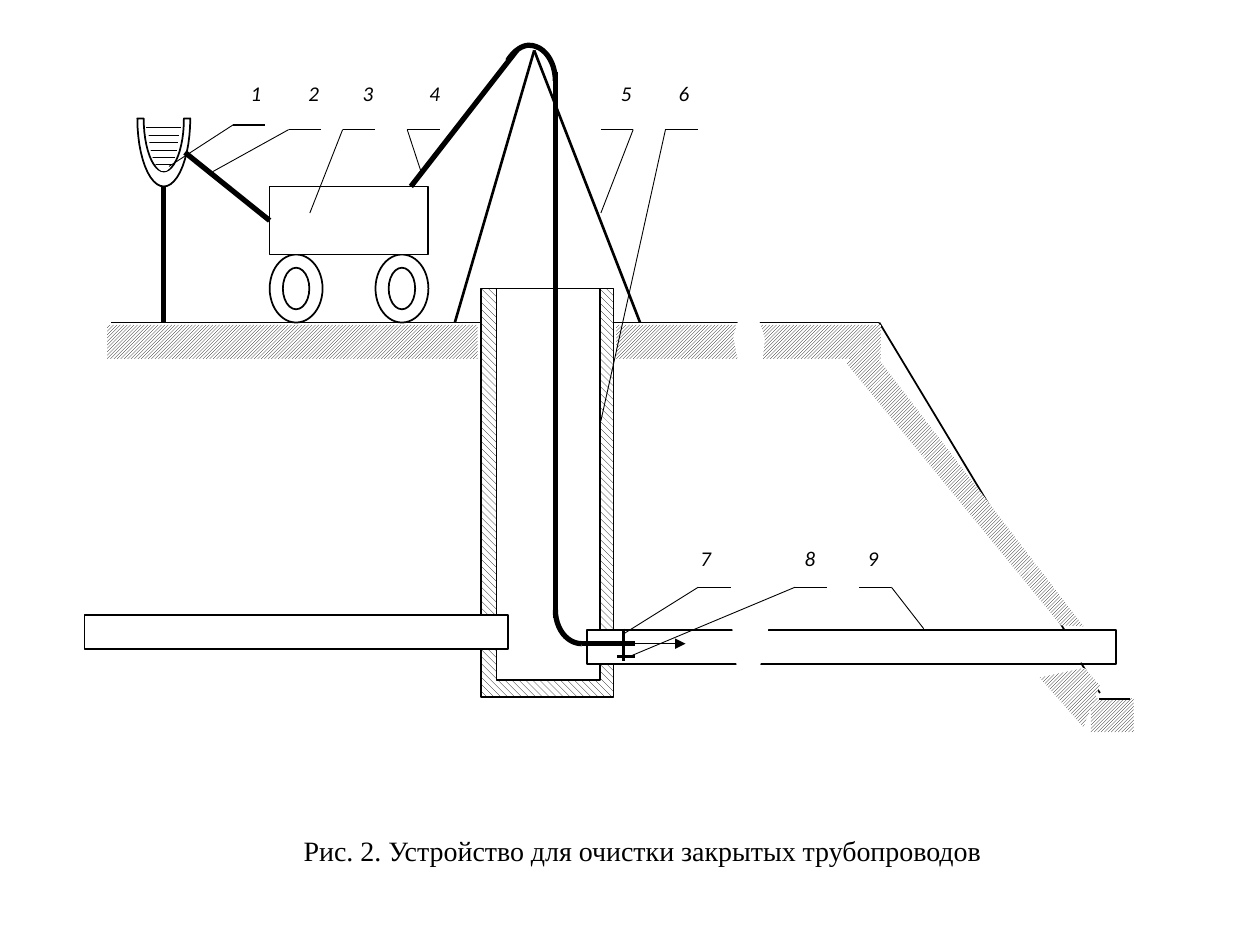
import math
from lxml import etree
from pptx import Presentation
from pptx import util as u
from pptx.dml.color import RGBColor
from pptx.enum import dml, shapes, text
from pptx.oxml.ns import qn

THEME = {
    "ink": RGBColor(0, 0, 0), "paper": RGBColor(255, 255, 255),
    "caption": ("Times New Roman", 16), "label": ("Calibri", 12),
    "hair": 0.5, "thin": 0.75, "outline": 1, "leg": 1.5, "hose": 3,
}
WIDTH, HEIGHT = 10, 7.5
# Drawing grid in inches: all positions below are (column, row)
LEFT, TOP, COLUMN, ROW = 0.25, 0.13, 0.42, 0.27

CAPTION = "Рис. 2. Устройство для очистки закрытых трубопроводов"
WHEELS = [4.5, 6.5]
CART = (4.5, 5, 3, 2)
SHAFT_WALL, SHAFT_INSIDE = (8.5, 8, 2.5, 12), (8.79, 8, 1.95, 11.5)
PIPES = [(1, 17.6, 8, 1), (10.5, 18.04, 10, 1)]
TROUGH = (2.5, 3)
WATER = (2.5, 3.26)
TRIPOD = [((8, 9), (9.5, 1)), ((9.5, 1), (11.5, 9))]

# Hose: curves as start point and cubic segments
TOP_BEND = ((9, 1.3), [((9.1, 1.04), (9.26, 0.85), (9.4, 0.85)),
                       ((9.69, 0.85), (9.9, 1.33), (9.9, 1.89))])
LOW_BEND = ((9.9, 17.44), [((9.9, 18), (10.12, 18.44), (10.4, 18.44))])
HOSE_ARM = ((9.17, 1), (7.17, 5))
HOSE_DROP = ((9.9, 1.63), (9.9, 17.7))
NOZZLE = ((10.4, 18.44), (11.4, 18.44))
JET = ((11.36, 18.44), (12.36, 18.44))
VALVE = [((11.19, 18), (11.19, 18.96)), ((11.07, 18.81), (11.4, 18.81))]

GROUND = [((8.5, 9), (1.5, 9)), ((11, 9), (16.02, 9)),
          ((16.02, 9), (19.52, 18.04)), ((19.83, 19), (20.19, 19.89))]
SOIL = [(1.43, 9.07, 7, 1), (11.05, 9.07, 5, 1), (20.02, 20.04, 0.81, 1)]
SLOPE_SOIL = [(15.4, 10.2), (16.02, 9.1), (16.02, 10.1), (19.88, 17.93), (19.45, 17.9)]
TOE_SOIL = [(19.05, 19.44), (19.9, 19.15), (20.19, 19.67), (19.88, 20.9)]
TOE_LINE = ((20.17, 20.07), (20.76, 20.07))
BREAK = [(13.48, 8.33), (13.33, 9.07), (13.26, 9.4), (13.4, 10.52), (13.24, 12.85),
         (13.19, 13.48), (13.31, 15.37), (13.4, 16.26), (13.24, 17.93), (13.29, 18.78),
         (13.43, 19.96), (13.67, 19.74), (13.9, 18.22), (13.98, 17.37), (13.76, 15.37),
         (13.9, 13.56), (13.69, 11.85), (13.86, 9.48), (13.64, 8.41)]

# Callouts: number, label column, shelf left, shelf row, leader side, target
SHELF = 0.61
CALLOUTS = [
    ("1", 4.24, 3.81, 3.19, "left", (2.6, 4.41)),
    ("2", 5.33, 4.86, 3.33, "left", (3.43, 4.56)),
    ("3", 6.36, 5.88, 3.33, "left", (5.26, 5.78)),
    ("4", 7.62, 7.1, 3.33, "left", (7.36, 4.56)),
    ("5", 11.24, 10.76, 3.33, "right", (10.76, 5.78)),
    ("6", 12.33, 11.98, 3.33, "left", (10.76, 11.89)),
    ("7", 12.74, 12.6, 16.78, "left", (11.19, 18.15)),
    ("8", 14.71, 14.43, 16.78, "left", (11.31, 18.81)),
    ("9", 15.9, 15.64, 16.78, "right", (16.86, 18)),
]
UPPER_LABELS, LOWER_LABELS = 2.26, 15.93

deck = Presentation()
deck.slide_width, deck.slide_height = u.Inches(WIDTH), u.Inches(HEIGHT)
slide = deck.slides.add_slide(deck.slide_layouts[6])


def place(point):
    return u.Inches(LEFT + point[0] * COLUMN), u.Inches(TOP + point[1] * ROW)


def paint(part, fill="paper", width=None):
    """Fill with a theme colour, a hatch pattern, or nothing."""
    part.shadow.inherit = False
    if fill is None:
        part.fill.background()
    elif isinstance(fill, str):
        part.fill.solid()
        part.fill.fore_color.rgb = THEME[fill]
    else:
        part.fill.patterned()
        part.fill.pattern = fill
        part.fill.fore_color.rgb = THEME["ink"]
        part.fill.back_color.rgb = THEME["paper"]
    if width:
        part.line.color.rgb = THEME["ink"]
        part.line.width = u.Pt(THEME[width])
    else:
        part.line.fill.background()
    return part


def block(box, fill="paper", width="outline", preset=shapes.MSO_SHAPE.RECTANGLE):
    column, row, columns, rows = box
    part = slide.shapes.add_shape(preset, *place((column, row)),
                                  u.Inches(columns * COLUMN), u.Inches(rows * ROW))
    return paint(part, fill, width)


def outline(points, fill="paper", width=None, close=True):
    builder = slide.shapes.build_freeform(*place(points[0]))
    builder.add_line_segments([place(p) for p in points[1:]], close=close)
    return paint(builder.convert_to_shape(), fill, width)


def line(ends, width="outline", arrow=False):
    part = slide.shapes.add_connector(shapes.MSO_CONNECTOR.STRAIGHT, *place(ends[0]), *place(ends[1]))
    part.line.color.rgb = THEME["ink"]
    part.line.width = u.Pt(THEME[width])
    if arrow:
        etree.SubElement(part.line._get_or_add_ln(), qn("a:tailEnd"), type="triangle")
    etree.SubElement(part._element.spPr, qn("a:effectLst"))
    return part


def bowl(center, across, deep, steps=24):
    """Lower half of an ellipse, from right to left."""
    angles = [math.pi * i / steps for i in range(steps + 1)]
    return [(center[0] + across * math.cos(a), center[1] + deep * math.sin(a)) for a in angles]


def curve(start, segments, steps=12):
    points = [start]
    for segment in segments:
        corners = (points[-1], *segment)
        for t in (i / steps for i in range(1, steps + 1)):
            weights = ((1 - t) ** 3, 3 * t * (1 - t) ** 2, 3 * t * t * (1 - t), t ** 3)
            points.append(tuple(sum(w * p[axis] for w, p in zip(weights, corners)) for axis in (0, 1)))
    return points


def write(words, left, top, width, height, style, italic=False):
    frame = slide.shapes.add_textbox(left, top, width, height).text_frame
    frame.text, frame.word_wrap = words, True
    frame.margin_left = frame.margin_right = frame.margin_top = frame.margin_bottom = 0
    frame.vertical_anchor = text.MSO_ANCHOR.MIDDLE
    paragraph = frame.paragraphs[0]
    paragraph.alignment = text.PP_ALIGN.CENTER
    font = paragraph.runs[0].font
    font.name, font.size = THEME[style][0], u.Pt(THEME[style][1])
    font.italic, font.color.rgb = italic, THEME["ink"]


# Cart, trough and water
for wheel in WHEELS:
    block((wheel, 7, 1, 2), preset=shapes.MSO_SHAPE.DONUT)
cart = block(CART)
outline(bowl(TROUGH, 0.5, 2) + bowl(TROUGH, 0.38, 1.56)[::-1], width="outline")
line(((2.5, 5), (2.5, 9)), "hose")
line(((2.9, 4), (4.5, 6)), "hose").end_connect(cart, 1)
outline(bowl(WATER, 0.29, 1.3), dml.MSO_PATTERN.DASHED_HORIZONTAL)
line(((2.17, 3.26), (2.83, 3.26)), "hair")

# Shaft, tripod and pipes
block(SHAFT_WALL, dml.MSO_PATTERN.WIDE_DOWNWARD_DIAGONAL)
block(SHAFT_INSIDE)
for leg in TRIPOD:
    line(leg, "leg")
for pipe in PIPES:
    block(pipe)

# Hose and water jet
for bend in (TOP_BEND, LOW_BEND):
    outline(curve(*bend), None, "hose", close=False)
for stretch in (HOSE_ARM, HOSE_DROP, NOZZLE):
    line(stretch, "hose")
line(JET, "thin", arrow=True)

# Ground, soil hatching and the break through ground and pipe
for edge in GROUND:
    line(edge)
HATCH = dml.MSO_PATTERN.LIGHT_UPWARD_DIAGONAL
for layer in SOIL:
    block(layer, HATCH, None)
outline(SLOPE_SOIL, HATCH)
outline(BREAK)
outline(TOE_SOIL, HATCH)
line(TOE_LINE)
for bar in VALVE:
    line(bar, "leg")

# Numbered callouts
for number, label, shelf, row, side, target in CALLOUTS:
    line(((shelf, row), (shelf + SHELF, row)), "thin")
    line(((shelf + SHELF * (side == "right"), row), target), "hair")
    label_row = UPPER_LABELS if row < 9 else LOWER_LABELS
    write(number, *place((label - 0.5, label_row - 0.5)), u.Inches(COLUMN), u.Inches(ROW), "label", True)

# Caption
write(CAPTION, u.Inches(0.06 * WIDTH), u.Inches(0.84 * HEIGHT),
      u.Inches(0.9 * WIDTH), u.Inches(0.12 * HEIGHT), "caption")

deck.save("out.pptx")
